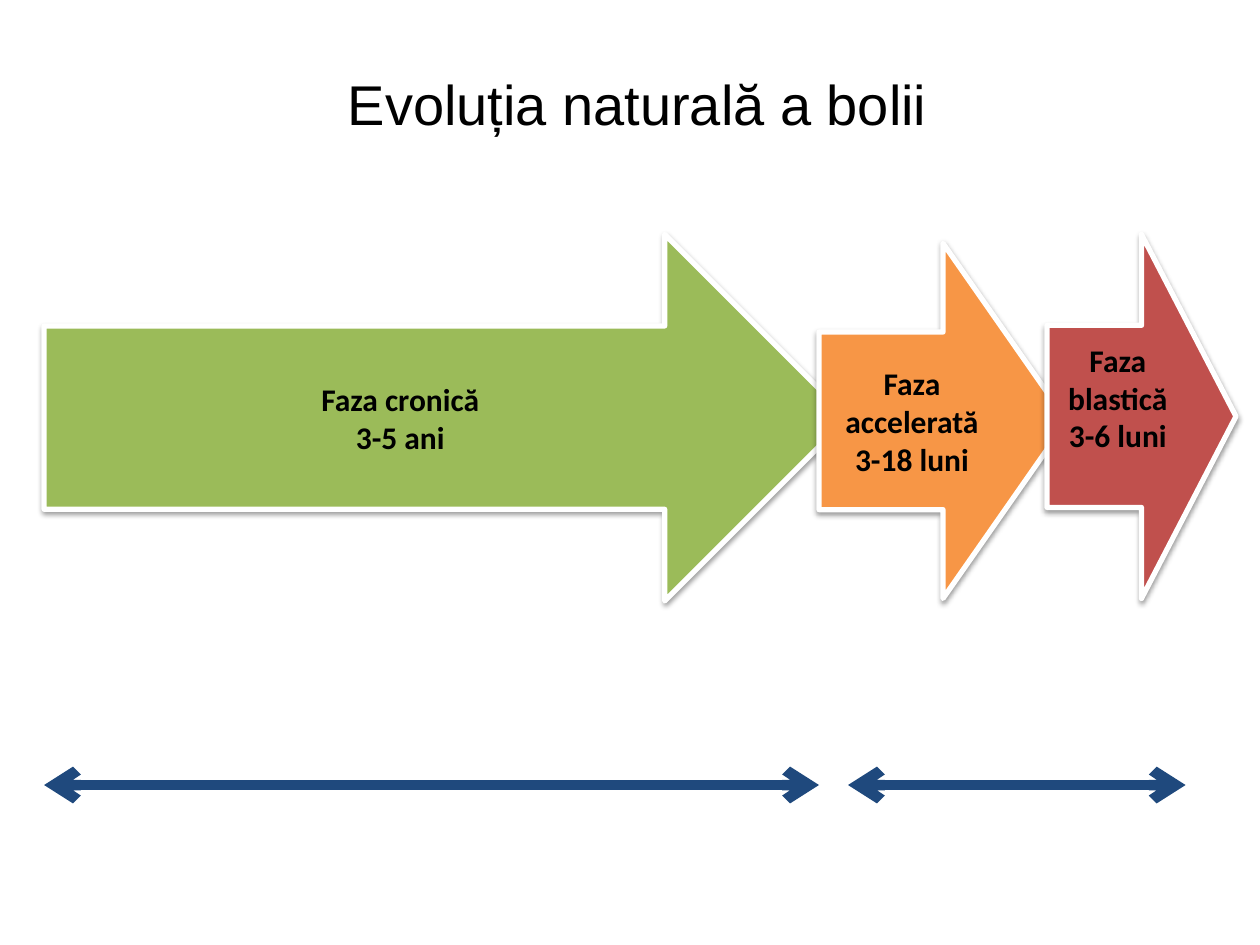
import pptx
import pptx.dml.color
import pptx.enum.shapes
import pptx.enum.text
import pptx.oxml
import pptx.oxml.ns
import pptx.util

Pt = pptx.util.Pt
PHASES = [
    (("Faza cronică", "3-5 ani"), "9BBB59", (25.2, 133.9, 459.4, 209.5), 3.6),
    (("Faza accelerată", "3-18 luni"), "F79646", (468, 139, 141.8, 203), 3.6),
    (("Faza blastică", "3-6 luni"), "C0504D", (598.3, 133.9, 108, 208.1), 25.2),
]
SPANS = [(25.2, 468), (484.6, 677.5)]
SPAN_Y = 448.6


def rgb(code):
    """Return the colour for a hex string."""
    return pptx.dml.color.RGBColor.from_string(code)


def add_xml(parent, markup):
    """Append a DrawingML element to parent."""
    tag, rest = markup.split(" ", 1) if " " in markup else (markup[:-2], "/>")
    namespace = pptx.oxml.ns.nsdecls("a")
    parent.append(pptx.oxml.parse_xml(f"<{tag} {namespace} {rest}"))


def format_text(frame, font_name, size, bold):
    """Centre all paragraphs and style their runs in black."""
    frame.vertical_anchor = pptx.enum.text.MSO_ANCHOR.MIDDLE
    frame.word_wrap = True
    for paragraph in frame.paragraphs:
        paragraph.alignment = pptx.enum.text.PP_ALIGN.CENTER
        for run in paragraph.runs:
            run.font.name = font_name
            run.font.size = Pt(size)
            run.font.bold = bold
            run.font.color.rgb = rgb("000000")


def add_title(slide, wording):
    """Place and fill the title placeholder."""
    title = slide.shapes.title
    title.left, title.top, title.width, title.height = map(Pt, (59.8, 23.8, 609.1, 70.6))
    title.text_frame.text = wording
    format_text(title.text_frame, "Arial", 32, False)


def add_phase(slide, lines, colour, box, bottom_margin):
    """Add a block arrow for one phase of the disease."""
    phase = slide.shapes.add_shape(
        pptx.enum.shapes.MSO_SHAPE.RIGHT_ARROW, *map(Pt, box)
    )
    phase.fill.solid()
    phase.fill.fore_color.rgb = rgb(colour)
    phase.line.color.rgb = rgb("FFFFFF")
    phase.line.width = Pt(3)
    phase.shadow.inherit = False
    effects = phase._element.spPr.find(pptx.oxml.ns.qn("a:effectLst"))
    add_xml(
        effects,
        f'a:outerShdw blurRad="{Pt(3.1)}" dist="{Pt(1.6)}" dir="5400000" rotWithShape="0">'
        '<a:srgbClr val="000000"><a:alpha val="38000"/></a:srgbClr></a:outerShdw>',
    )
    phase.text_frame.text = "\n".join(lines)
    phase.text_frame.margin_bottom = Pt(bottom_margin)
    format_text(phase.text_frame, "Calibri", 18, True)


def add_span(slide, start, end):
    """Add a double-headed line that marks a stretch of time."""
    span = slide.shapes.add_connector(
        pptx.enum.shapes.MSO_CONNECTOR.STRAIGHT,
        Pt(start), Pt(SPAN_Y), Pt(end), Pt(SPAN_Y),
    )
    span.line.color.rgb = rgb("1F497D")
    span.line.width = Pt(6)
    for tip in ("a:headEnd", "a:tailEnd"):
        add_xml(span.line._get_or_add_ln(), f'{tip} type="arrow"/>')
    add_xml(span._element.spPr, "a:effectLst/>")


def main():
    """Build the slide and save it."""
    deck = pptx.Presentation()
    deck.slide_width, deck.slide_height = Pt(720), Pt(540)
    slide = deck.slides.add_slide(deck.slide_layouts[5])
    add_title(slide, "Evoluția naturală a bolii")
    for phase in PHASES:
        add_phase(slide, *phase)
    for span in SPANS:
        add_span(slide, *span)
    deck.save("out.pptx")


if __name__ == "__main__":
    main()
